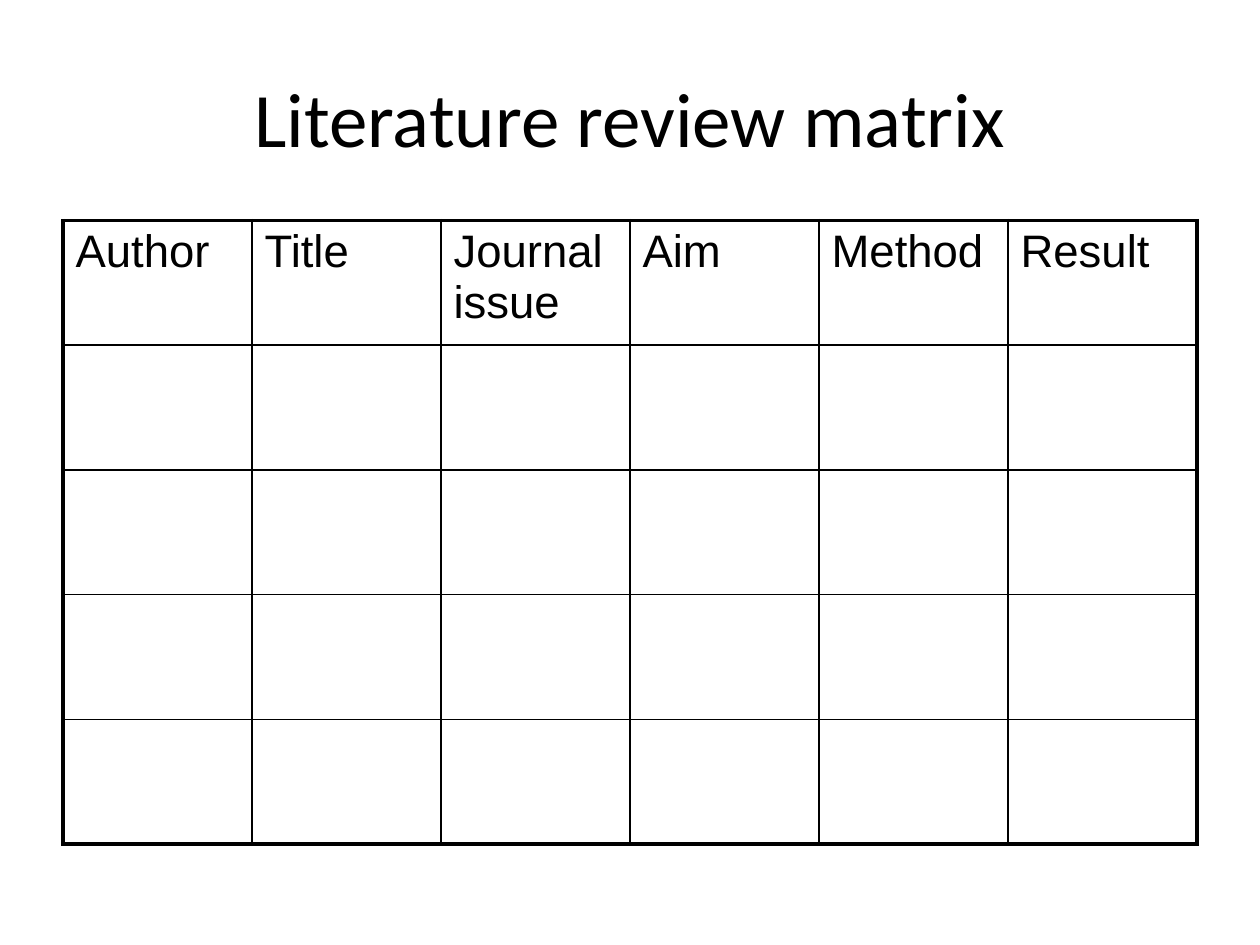
"""Build a slide with an empty literature review matrix."""
from lxml.etree import SubElement
from pptx import Presentation
from pptx.dml.color import RGBColor
from pptx.enum.text import MSO_ANCHOR, PP_ALIGN
from pptx.oxml.ns import qn
from pptx.util import Inches, Pt

TITLE = "Literature review matrix"
HEADS = ["Author", "Title", "Journal issue", "Aim", "Method", "Result"]
ROWS, COLS = 5, len(HEADS)
WIDTH, HEIGHT = 1.5, 0.99
THIN, THICK = Pt(1), Pt(2.25)
BLACK = RGBColor(0, 0, 0)


def write(para, text, font, size):
    run = para.add_run()
    run.text = text
    run.font.name = font
    run.font.size = Pt(size)
    run.font.color.rgb = BLACK


def border(cell, row, col):
    outer = {"L": col == 0, "R": col == COLS - 1,
             "T": row == 0, "B": row == ROWS - 1}
    props = cell._tc.get_or_add_tcPr()
    for side, edge in outer.items():
        line = SubElement(props, qn(f"a:ln{side}"), w=str(THICK if edge else THIN))
        fill = SubElement(line, qn("a:solidFill"))
        SubElement(fill, qn("a:srgbClr"), val=str(BLACK))


def main():
    deck = Presentation()
    deck.slide_width, deck.slide_height = Inches(10), Inches(7.5)
    slide = deck.slides.add_slide(deck.slide_layouts[6])

    title = slide.shapes.add_textbox(
        Inches(0.5), Inches(0.3), Inches(9), Inches(1.25)).text_frame
    title.word_wrap = True
    title.vertical_anchor = MSO_ANCHOR.MIDDLE
    title.paragraphs[0].alignment = PP_ALIGN.CENTER
    write(title.paragraphs[0], TITLE, "Calibri", 44)

    table = slide.shapes.add_table(
        ROWS, COLS, Inches(0.5), Inches(1.75),
        Inches(COLS * WIDTH), Inches(ROWS * HEIGHT)).table
    table.first_row = table.horz_banding = False
    for column in table.columns:
        column.width = Inches(WIDTH)
    for row in range(ROWS):
        table.rows[row].height = Inches(HEIGHT)
        for col in range(COLS):
            cell = table.cell(row, col)
            border(cell, row, col)
            cell.fill.background()
    for col, head in enumerate(HEADS):
        write(table.cell(0, col).text_frame.paragraphs[0], head, "Arial", 26)

    deck.save("out.pptx")


if __name__ == "__main__":
    main()
